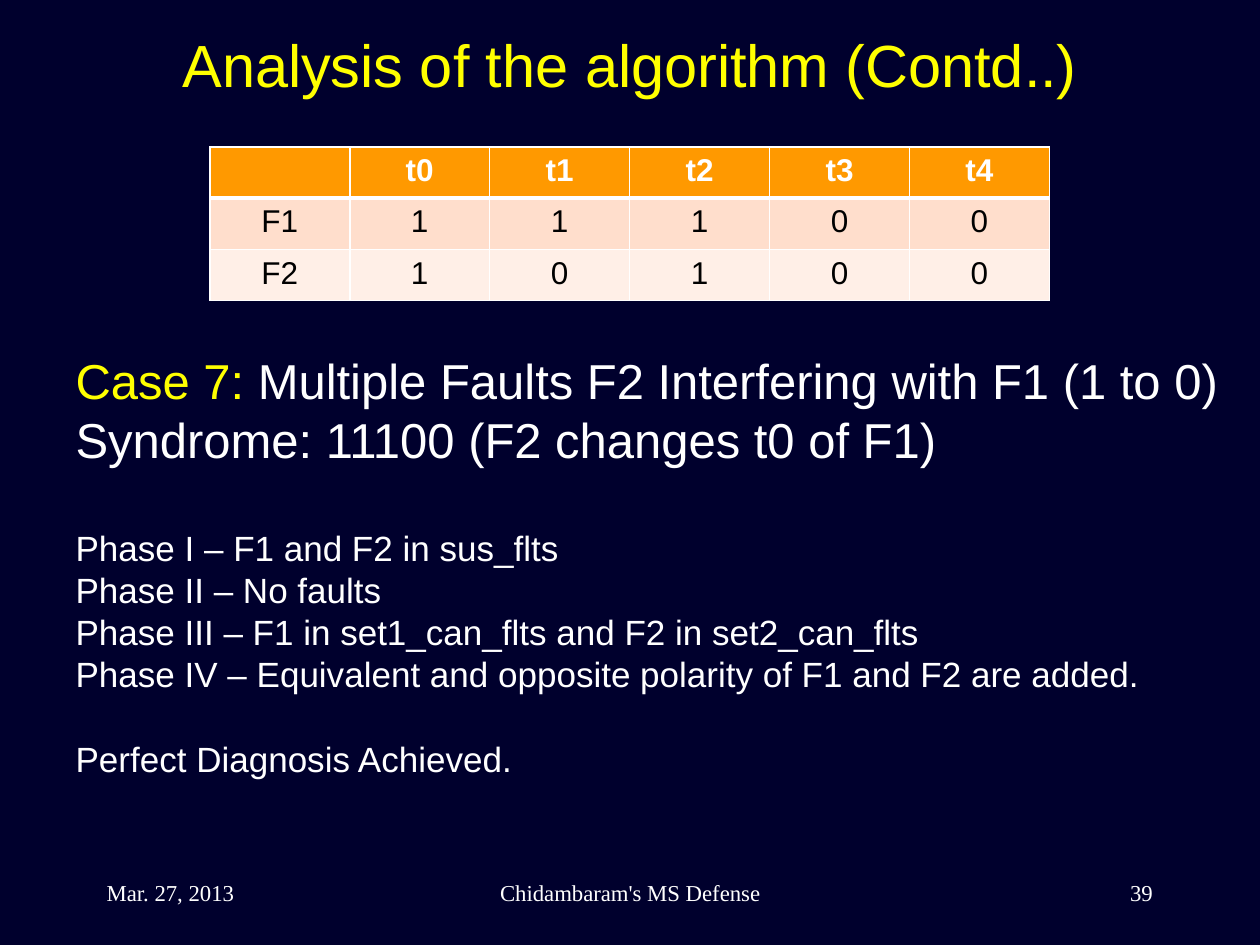
from dataclasses import dataclass

from lxml import etree
from pptx import Presentation
from pptx.dml.color import RGBColor
from pptx.enum import text as t
from pptx.oxml import ns
from pptx.util import Cm, Pt


@dataclass(frozen=True)
class Theme:
    background: str = "00002D"
    accent: str = "FFFF00"
    light: str = "FFFFFF"
    dark: str = "000000"
    header_fill: str = "FF9900"
    row_fills: tuple = ("FFDECC", "FFEFE7")
    font: str = "Arial"
    footer_font: str = "Times New Roman"
    title_size: int = 34
    case_size: int = 28
    phase_size: int = 20
    table_size: int = 18
    footer_size: int = 13
    leading: float = 1.2


THEME = Theme()
ALIGN = t.PP_ALIGN

SYNDROMES = [
    ["", "t0", "t1", "t2", "t3", "t4"],
    ["F1", "1", "1", "1", "0", "0"],
    ["F2", "1", "0", "1", "0", "0"],
]
CASE = [
    [("Case 7: ", THEME.accent),
     ("Multiple Faults F2 Interfering with F1 (1 to 0)", THEME.light)],
    [("Syndrome: 11100 (F2 changes t0 of F1)", THEME.light)],
]
PHASES = [
    "Phase I – F1 and F2 in sus_flts",
    "Phase II – No faults",
    "Phase III – F1 in set1_can_flts and F2 in set2_can_flts",
    "Phase IV – Equivalent and opposite polarity of F1 and F2 are added.",
]
CONCLUSION = "Perfect Diagnosis Achieved."
FOOTERS = [
    ("Mar. 27, 2013", 1.9, 5.29, ALIGN.LEFT),
    ("Chidambaram's MS Defense", 8.68, 8.04, ALIGN.CENTER),
    ("39", 18.2, 5.29, ALIGN.RIGHT),
]


def style(paragraph, size, color=None, name=THEME.font, align=ALIGN.LEFT, bold=False):
    paragraph.alignment = align
    font = paragraph.font
    font.name, font.size, font.bold = name, Pt(size), bold
    if color:
        font.color.rgb = RGBColor.from_string(color)


def place(shape, left, top, width, height):
    shape.left, shape.top = Cm(left), Cm(top)
    shape.width, shape.height = Cm(width), Cm(height)


def set_frame(frame, anchor):
    frame.word_wrap = True
    frame.auto_size = t.MSO_AUTO_SIZE.NONE
    frame.vertical_anchor = anchor


def add_title(slide, wording):
    title = slide.shapes.title
    place(title, 1.27, 0.43, 22.86, 3.18)
    set_frame(title.text_frame, t.MSO_ANCHOR.TOP)
    title.text_frame.text = wording
    style(title.text_frame.paragraphs[0], THEME.title_size, THEME.accent,
          align=ALIGN.CENTER)


def set_borders(cell, top, bottom):
    """Draw light borders; top and bottom are widths in points."""
    properties = cell._tc.get_or_add_tcPr()
    widths = {"lnL": 1, "lnR": 1, "lnT": top, "lnB": bottom}
    for position, (side, width) in enumerate(widths.items()):
        line = etree.Element(ns.qn(f"a:{side}"), w=str(Pt(width)))
        fill = etree.SubElement(line, ns.qn("a:solidFill"))
        etree.SubElement(fill, ns.qn("a:srgbClr"), val=THEME.light)
        properties.insert(position, line)


def add_syndrome_table(slide):
    rows, columns = len(SYNDROMES), len(SYNDROMES[0])
    table = slide.shapes.add_table(
        rows, columns, Cm(4.23), Cm(2.96), Cm(16.93), Cm(3.1)).table
    fills = (THEME.header_fill, *THEME.row_fills)
    for r, (values, fill) in enumerate(zip(SYNDROMES, fills)):
        header = r == 0
        for c, value in enumerate(values):
            cell = table.cell(r, c)
            cell.text = value
            cell.fill.solid()
            cell.fill.fore_color.rgb = RGBColor.from_string(fill)
            style(cell.text_frame.paragraphs[0], THEME.table_size,
                  THEME.light if header else THEME.dark,
                  align=ALIGN.CENTER, bold=header)
            set_borders(cell, top=3 if r == 1 else 1, bottom=3 if header else 1)


def add_line(frame, runs, size, gap=0):
    """Add an unbulleted paragraph of (wording, colour) runs, gap points below the last."""
    first = frame.paragraphs[0]
    paragraph = frame.add_paragraph() if first.runs else first
    style(paragraph, size)
    paragraph.line_spacing = Pt(size * THEME.leading)
    paragraph.space_before = Pt(gap)
    properties = paragraph._p.get_or_add_pPr()
    properties.set("marL", "0")
    properties.set("indent", "0")
    bullet_off = etree.Element(ns.qn("a:buNone"))
    properties.find(ns.qn("a:defRPr")).addprevious(bullet_off)
    for wording, color in runs:
        run = paragraph.add_run()
        run.text = wording
        run.font.color.rgb = RGBColor.from_string(color)


def add_diagnosis(slide):
    body = slide.placeholders[1]
    place(body, 1.27, 6.94, 23.7, 9.98)
    frame = body.text_frame
    set_frame(frame, t.MSO_ANCHOR.TOP)
    case_gap = THEME.case_size * THEME.leading
    phase_gap = THEME.phase_size * THEME.leading
    for runs in CASE:
        add_line(frame, runs, THEME.case_size)
    for index, phase in enumerate(PHASES):
        add_line(frame, [(phase, THEME.light)], THEME.phase_size,
                 gap=0 if index else case_gap)
    add_line(frame, [(CONCLUSION, THEME.light)], THEME.phase_size, gap=phase_gap)


def add_footer(slide, wording, left, width, align):
    footer = slide.shapes.add_textbox(Cm(left), Cm(17.35), Cm(width), Cm(1.27))
    set_frame(footer.text_frame, t.MSO_ANCHOR.MIDDLE)
    footer.text_frame.text = wording
    style(footer.text_frame.paragraphs[0], THEME.footer_size, THEME.light,
          THEME.footer_font, align)


def main():
    deck = Presentation()
    deck.slide_width, deck.slide_height = Cm(25.4), Cm(19.05)
    slide = deck.slides.add_slide(deck.slide_layouts[1])
    slide.background.fill.solid()
    slide.background.fill.fore_color.rgb = RGBColor.from_string(THEME.background)
    for footer in FOOTERS:
        add_footer(slide, *footer)
    add_title(slide, "Analysis of the algorithm (Contd..)")
    add_syndrome_table(slide)
    add_diagnosis(slide)
    deck.save("out.pptx")


if __name__ == "__main__":
    main()
